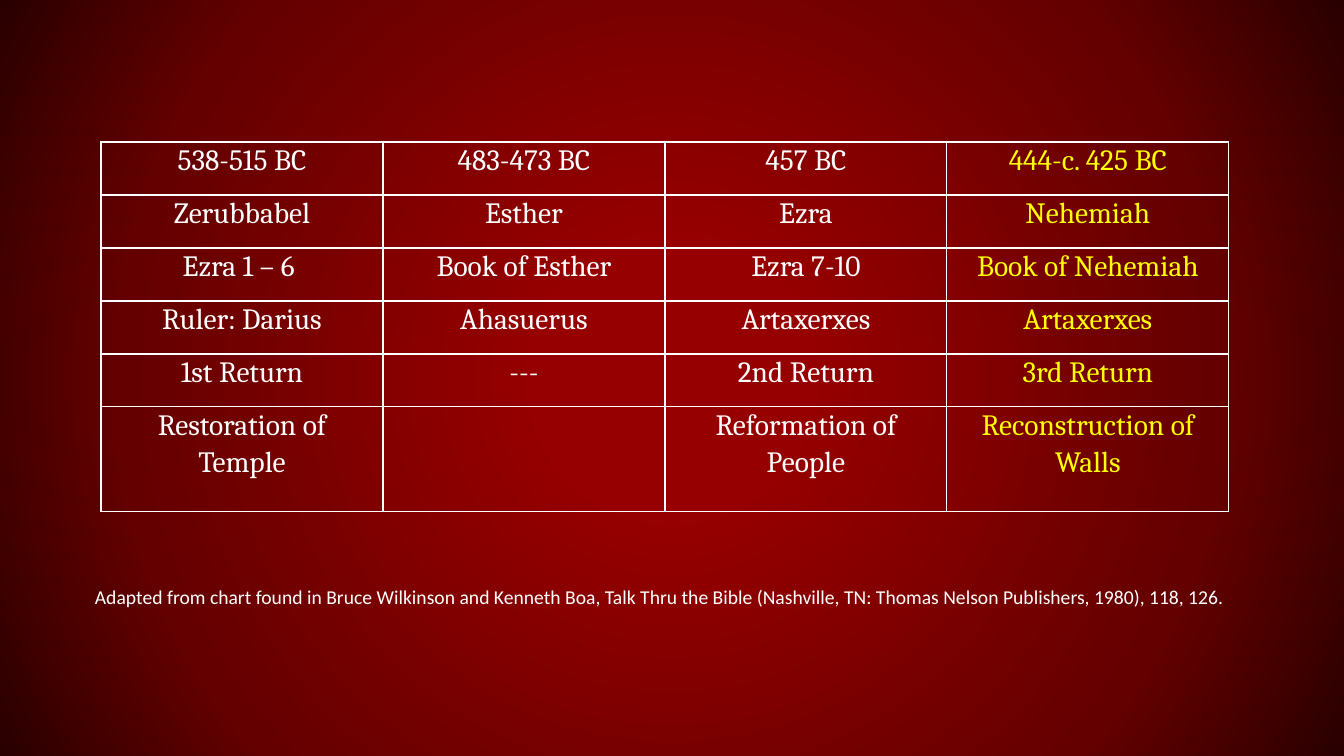
from pptx import Presentation, oxml, util as u
from pptx.dml.color import RGBColor
from pptx.enum import text
from pptx.oxml.ns import nsdecls


def px(n):
    return u.Emu(round(n * 914400 / 100.8))


def style(p, name, size, color):
    p.font.name = name
    p.font.size = u.Pt(size)
    p.font.color.rgb = RGBColor.from_string(color)


WHITE, YELLOW = "FFFFFF", "FFFF00"
ROWS = [
    ["538-515 BC", "483-473 BC", "457 BC", "444-c. 425 BC"],
    ["Zerubbabel", "Esther", "Ezra", "Nehemiah"],
    ["Ezra 1 – 6 ", "Book of Esther", "Ezra 7-10", "Book of Nehemiah"],
    ["Ruler: Darius", "Ahasuerus", "Artaxerxes", "Artaxerxes"],
    ["1st Return", "---", "2nd Return", "3rd Return"],
    ["Restoration of Temple", "", "Reformation of People", "Reconstruction of Walls"],
]
HEIGHTS = [53] * 5 + [105]
COL_WIDTH = 282

prs = Presentation()
prs.slide_width, prs.slide_height = px(1344), px(756)
s = prs.slides.add_slide(prs.slide_layouts[6])

stops = "".join(
    f'<a:gs pos="{pos}000"><a:srgbClr val="{color}"/></a:gs>'
    for pos, color in [(17, "960000"), (71, "650000"), (100, "290000")]
)
bg = oxml.parse_xml(
    f'<p:bg {nsdecls("p", "a")}><p:bgPr><a:gradFill><a:gsLst>{stops}</a:gsLst>'
    '<a:path path="circle"><a:fillToRect l="50000" t="50000" r="50000" b="50000"/></a:path>'
    '</a:gradFill><a:effectLst/></p:bgPr></p:bg>'
)
s._element.cSld.insert(0, bg)

table = s.shapes.add_table(
    len(ROWS), 4, px(101), px(142), px(4 * COL_WIDTH), px(sum(HEIGHTS))
).table
table.first_row = table.horz_banding = False
for col in table.columns:
    col.width = px(COL_WIDTH)

for r, (words, height) in enumerate(zip(ROWS, HEIGHTS)):
    table.rows[r].height = px(height)
    for c, word in enumerate(words):
        cell = table.cell(r, c)
        cell.fill.background()
        cell.margin_left = cell.margin_right = px(13)
        cell.margin_top = cell.margin_bottom = 0
        tcPr = cell._tc.get_or_add_tcPr()
        for i, side in enumerate("LRTB"):
            tcPr.insert(i, oxml.parse_xml(
                f'<a:ln{side} {nsdecls("a")} w="12700"><a:solidFill>'
                f'<a:srgbClr val="{WHITE}"/></a:solidFill></a:ln{side}>'
            ))
        p = cell.text_frame.paragraphs[0]
        p.text = word
        p.alignment = text.PP_ALIGN.CENTER
        p.line_spacing = 1.07
        style(p, "Cambria", 21, YELLOW if c == 3 else WHITE)

tf = s.shapes.add_textbox(px(85), px(580), px(1160), px(34)).text_frame
tf.word_wrap = False
tf.auto_size = text.MSO_AUTO_SIZE.SHAPE_TO_FIT_TEXT
tf.vertical_anchor = text.MSO_ANCHOR.MIDDLE
p = tf.paragraphs[0]
p.text = (
    "Adapted from chart found in Bruce Wilkinson and Kenneth Boa, Talk Thru the Bible "
    "(Nashville, TN: Thomas Nelson Publishers, 1980), 118, 126."
)
style(p, "Calibri", 14, WHITE)

prs.save("out.pptx")
